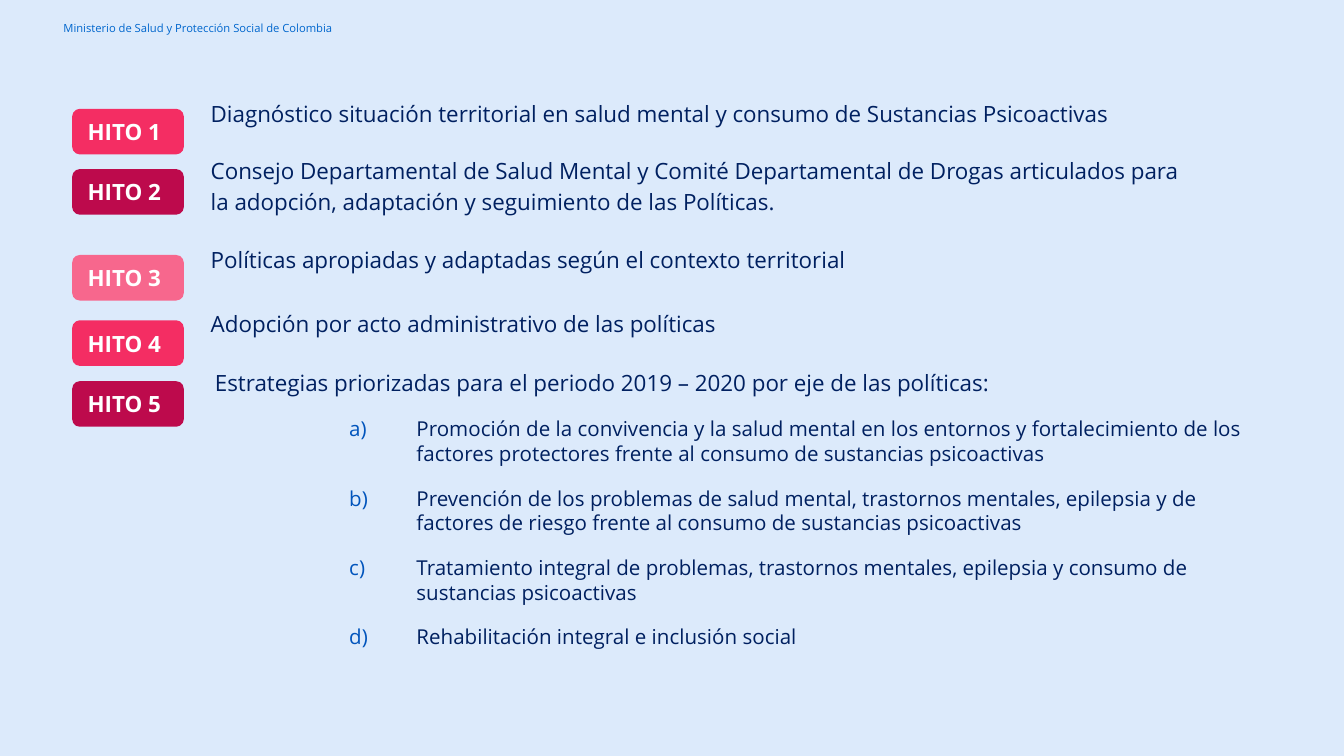
from lxml import etree
from pptx import Presentation
from pptx.dml.color import RGBColor
from pptx.enum.shapes import MSO_SHAPE
from pptx.enum.text import MSO_ANCHOR, PP_ALIGN
from pptx.oxml.ns import qn
from pptx.util import Pt

ROUNDED = MSO_SHAPE.ROUNDED_RECTANGLE
MIDDLE = MSO_ANCHOR.MIDDLE
LEFT = PP_ALIGN.LEFT

FONT = "Open Sans"
COLORS = {
    "background": "DCEAFB",
    "header": "0066CD",
    "text": "002060",
    "letter": "0054BC",
    "white": "FFFFFF",
    "pink": "F42D63",
    "crimson": "BD0A4C",
    "rose": "F7678D",
}
SPACE_BEFORE = 10.7

# Badge colour, badge top, text (left, top, width, height), text
MILESTONES = [
    ("pink", 58.3, (105.8, 48.2, 592.6, 38.2),
     "Diagnóstico situación territorial en salud mental y consumo de Sustancias Psicoactivas"),
    ("crimson", 90.6, (105.8, 78.5, 538.6, 58.3),
     "Consejo Departamental de Salud Mental y Comité Departamental de Drogas articulados para "
     "la adopción, adaptación y seguimiento de las Políticas."),
    ("rose", 136.6, (105.8, 126, 584.6, 38.2),
     "Políticas apropiadas y adaptadas según el contexto territorial"),
    ("pink", 171.6, (105.8, 160.6, 584.6, 43.2),
     "Adopción por acto administrativo de las políticas"),
    ("crimson", 204.2, (108, 194.4, 581.8, 174.2),
     "Estrategias priorizadas para el periodo 2019 – 2020 por eje de las políticas:"),
]
STRATEGIES = [
    "Promoción de la convivencia y la salud mental en los entornos y fortalecimiento de los "
    "factores protectores frente al consumo de sustancias psicoactivas",
    "Prevención de los problemas de salud mental, trastornos mentales, epilepsia y de "
    "factores de riesgo frente al consumo de sustancias psicoactivas",
    "Tratamiento integral de problemas, trastornos mentales, epilepsia y consumo de "
    "sustancias psicoactivas",
    "Rehabilitación integral e inclusión social",
]


def color(name):
    return RGBColor.from_string(COLORS[name])


def write(para, text, size, color_name, bold=False):
    para.text = text
    para.alignment = LEFT
    para.font.name = FONT
    para.font.size = Pt(size)
    para.font.bold = bold
    para.font.color.rgb = color(color_name)


def add_text_box(slide, bounds):
    box = slide.shapes.add_textbox(*map(Pt, bounds))
    box.text_frame.word_wrap = True
    return box.text_frame


def add_header(slide, text):
    frame = add_text_box(slide, (28.8, 7.9, 168.5, 14.4))
    frame.vertical_anchor = MIDDLE
    frame.margin_left = frame.margin_right = Pt(5.2)
    frame.margin_top = frame.margin_bottom = Pt(2.6)
    write(frame.paragraphs[0], text, 6, "header")


def add_badge(slide, text, top, fill):
    badge = slide.shapes.add_shape(ROUNDED, Pt(38.7), Pt(top), Pt(59.8), Pt(24.4))
    badge.shadow.inherit = False
    badge.fill.solid()
    badge.fill.fore_color.rgb = color(fill)
    badge.line.fill.background()
    badge.text_frame.vertical_anchor = MIDDLE
    write(badge.text_frame.paragraphs[0], text, 12, "white", bold=True)


def add_milestone_text(slide, bounds, text, line_spacing):
    frame = add_text_box(slide, bounds)
    para = frame.paragraphs[0]
    write(para, text, 12, "text")
    para.line_spacing = line_spacing
    para.space_before = Pt(SPACE_BEFORE)
    return frame


def add_lettered_item(frame, text):
    para = frame.add_paragraph()
    write(para, text, 11, "text")
    para.level = 2
    para.space_before = Pt(SPACE_BEFORE)
    # Hanging indent and automatic a), b), c) letters
    properties = para._p.get_or_add_pPr()
    properties.set("marL", str(Pt(108)))
    properties.set("indent", str(Pt(-36)))
    bullet_color = etree.SubElement(properties, qn("a:buClr"))
    etree.SubElement(bullet_color, qn("a:srgbClr"), val=COLORS["letter"])
    etree.SubElement(properties, qn("a:buFont"), typeface=FONT)
    etree.SubElement(properties, qn("a:buAutoNum"), type="alphaLcParenR")


def main():
    deck = Presentation()
    deck.slide_width, deck.slide_height = Pt(720), Pt(405)
    slide = deck.slides.add_slide(deck.slide_layouts[6])
    slide.background.fill.solid()
    slide.background.fill.fore_color.rgb = color("background")

    add_header(slide, "Ministerio de Salud y Protección Social de Colombia")

    # Milestones: badge and description
    for number, (fill, top, bounds, text) in enumerate(MILESTONES, start=1):
        add_badge(slide, f"HITO {number}", top, fill)
        line_spacing = 1.0 if number == len(MILESTONES) else 1.15
        frame = add_milestone_text(slide, bounds, text, line_spacing)

    # Strategies under the last milestone
    for strategy in STRATEGIES:
        add_lettered_item(frame, strategy)

    deck.save("out.pptx")


if __name__ == "__main__":
    main()
